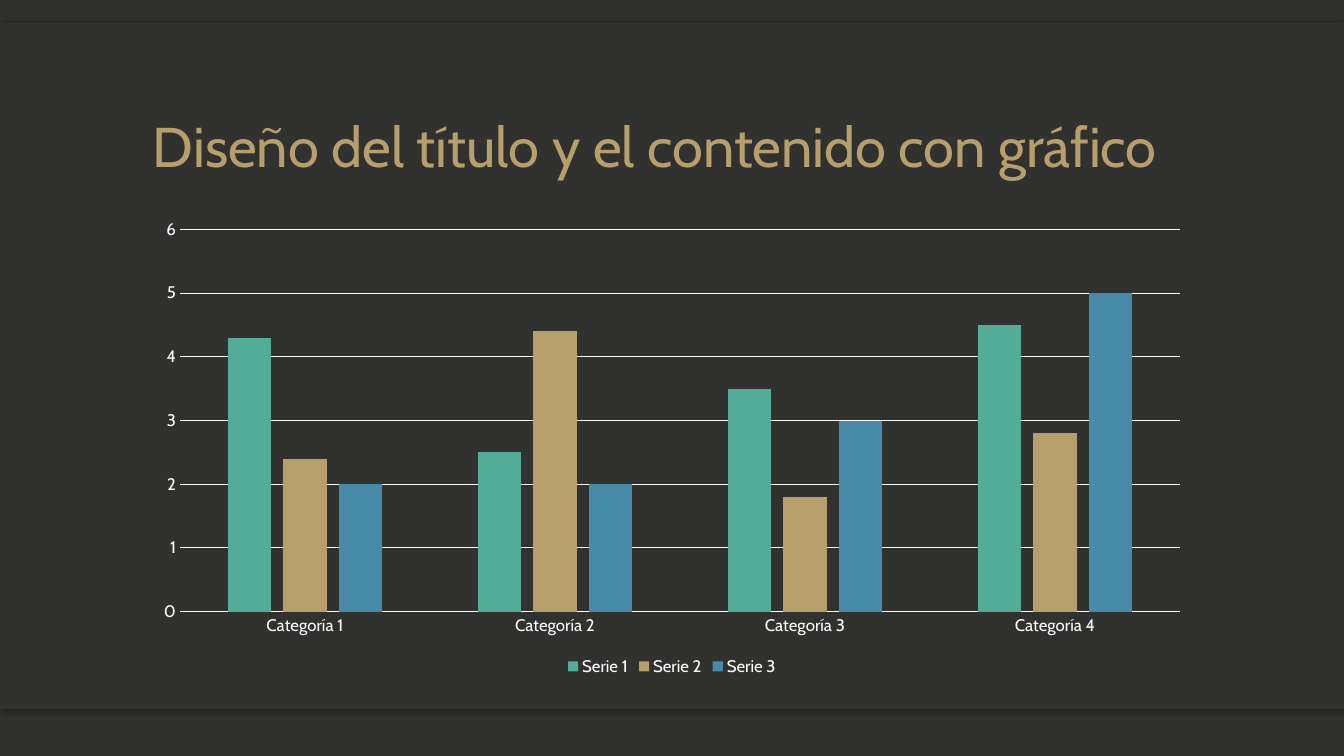
from dataclasses import dataclass

from lxml import etree
from pptx import Presentation
from pptx.chart.chart import Chart
from pptx.chart.data import CategoryChartData
from pptx.dml.color import RGBColor
from pptx.enum.chart import XL_CHART_TYPE, XL_LEGEND_POSITION, XL_TICK_MARK
from pptx.enum.shapes import MSO_SHAPE
from pptx.enum.text import MSO_ANCHOR, PP_ALIGN
from pptx.oxml.ns import qn
from pptx.slide import Slide
from pptx.util import Emu, Inches, Pt

RECT = MSO_SHAPE.RECTANGLE
COLUMNS = XL_CHART_TYPE.COLUMN_CLUSTERED
BOTTOM = XL_LEGEND_POSITION.BOTTOM
NO_TICK = XL_TICK_MARK.NONE
LOW = MSO_ANCHOR.BOTTOM
LEFT = PP_ALIGN.LEFT

DARK = RGBColor(0x31, 0x31, 0x2F)
WHITE = RGBColor(0xFF, 0xFF, 0xFF)
GREEN = RGBColor(0x52, 0xAC, 0x97)
GOLD = RGBColor(0xB7, 0x9E, 0x6D)
BLUE = RGBColor(0x47, 0x8B, 0xA9)

FONT = "Cabin"
WIDTH, HEIGHT = Inches(13.333), Inches(7.5)
COLS, ROWS = 160, 90
MARGIN = 17
SPAN = 126


@dataclass(frozen=True)
class Band:
    top: float
    rows: float
    angle: int | None = None


@dataclass(frozen=True)
class Series:
    name: str
    values: tuple[float, ...]
    color: RGBColor


BANDS = (
    Band(78.5, 5.9, 90),
    Band(2.8, 5.9, 270),
    Band(2.8, 81.6),
)
GROUPS = [f"Categoría {n}" for n in range(1, 5)]
SERIES = (
    Series("Serie 1", (4.3, 2.5, 3.5, 4.5), GREEN),
    Series("Serie 2", (2.4, 4.4, 1.8, 2.8), GOLD),
    Series("Serie 3", (2, 2, 3, 5), BLUE),
)


def place(left: float, top: float, cols: float, rows: float) -> tuple[Emu, ...]:
    """Turn grid columns and rows into slide lengths."""
    return (
        Emu(round(WIDTH * left / COLS)),
        Emu(round(HEIGHT * top / ROWS)),
        Emu(round(WIDTH * cols / COLS)),
        Emu(round(HEIGHT * rows / ROWS)),
    )


def add_band(slide: Slide, band: Band) -> None:
    shape = slide.shapes.add_shape(RECT, *place(0, band.top, COLS, band.rows))
    shape.shadow.inherit = False
    shape.fill.solid()
    shape.fill.fore_color.rgb = DARK
    shape.line.fill.background()
    if band.angle is None:
        return
    effects = shape.element.spPr.find(qn("a:effectLst"))
    shade = etree.SubElement(
        effects, qn("a:outerShdw"), blurRad=str(Pt(4)), dist=str(Pt(2)),
        dir=str(band.angle * 60000), algn="ctr", rotWithShape="0",
    )
    black = etree.SubElement(shade, qn("a:srgbClr"), val="000000")
    etree.SubElement(black, qn("a:alpha"), val="25000")


def set_title(slide: Slide, text: str) -> None:
    """Fill the title and lift it above the bands."""
    title = slide.shapes.title
    title.left, title.top, title.width, title.height = place(MARGIN, 5.5, SPAN, 16.5)
    frame = title.text_frame
    frame.word_wrap = True
    frame.vertical_anchor = LOW
    par = frame.paragraphs[0]
    par.alignment = LEFT
    par.line_spacing = 0.9
    run = par.add_run()
    run.text = text
    run.font.name = FONT
    run.font.size = Pt(40)
    run.font.color.rgb = GOLD
    slide.shapes.element.append(title.element)


def style_axes(chart: Chart) -> None:
    for axis in (chart.category_axis, chart.value_axis):
        axis.major_tick_mark = NO_TICK
        axis.minor_tick_mark = NO_TICK
    values = chart.value_axis
    values.minimum_scale, values.maximum_scale, values.major_unit = 0, 6, 1
    values.format.line.fill.background()
    for line in (chart.category_axis.format.line, values.major_gridlines.format.line):
        line.color.rgb = WHITE
        line.width = Pt(0.75)


def add_columns(slide: Slide) -> None:
    data = CategoryChartData()
    data.categories = GROUPS
    for item in SERIES:
        data.add_series(item.name, item.values)
    chart = slide.shapes.add_chart(COLUMNS, *place(MARGIN, 25, SPAN, 56), data).chart
    chart.has_title = False
    chart.font.name = FONT
    chart.font.size = Pt(12)
    chart.font.color.rgb = WHITE
    chart.has_legend = True
    chart.legend.position = BOTTOM
    chart.legend.include_in_layout = False
    style_axes(chart)
    plot = chart.plots[0]
    plot.vary_by_categories = False
    plot.gap_width = 219
    plot.overlap = -27
    for series, item in zip(plot.series, SERIES):
        series.format.fill.solid()
        series.format.fill.fore_color.rgb = item.color


def main() -> None:
    deck = Presentation()
    deck.slide_width, deck.slide_height = WIDTH, HEIGHT
    slide = deck.slides.add_slide(deck.slide_layouts[5])
    slide.background.fill.solid()
    slide.background.fill.fore_color.rgb = DARK
    for band in BANDS:
        add_band(slide, band)
    set_title(slide, "Diseño del título y el contenido con gráfico")
    add_columns(slide)
    deck.save("out.pptx")


if __name__ == "__main__":
    main()
